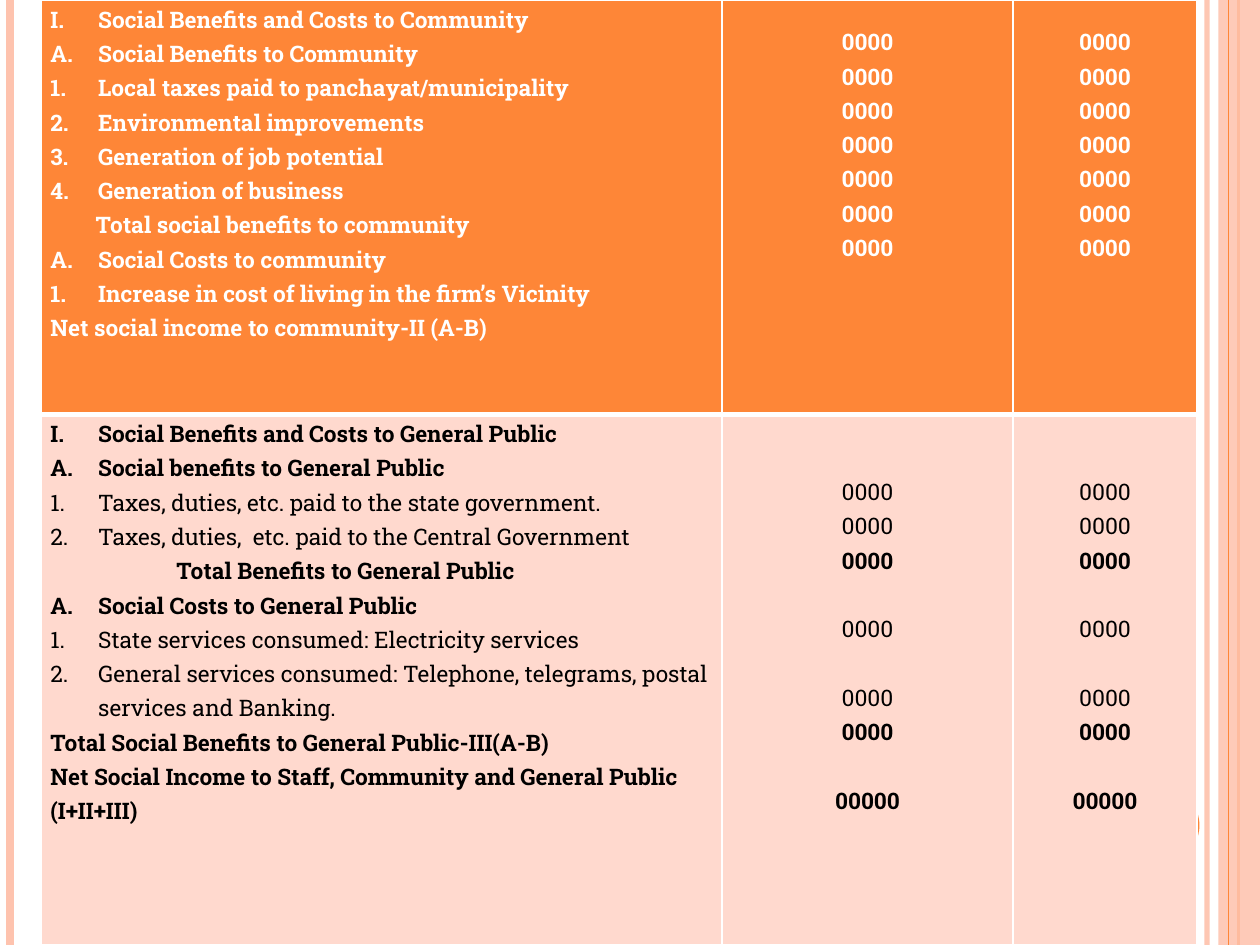
from lxml import etree
from pptx import Presentation
from pptx.dml.color import RGBColor
from pptx.enum.shapes import MSO_CONNECTOR, MSO_SHAPE
from pptx.enum.text import MSO_ANCHOR, PP_ALIGN
from pptx.oxml import parse_xml
from pptx.oxml.ns import nsdecls, qn
from pptx.util import Inches, Pt

LINE = MSO_CONNECTOR.STRAIGHT
RECT, OVAL = MSO_SHAPE.RECTANGLE, MSO_SHAPE.OVAL
LEFT, MID, TOP = PP_ALIGN.LEFT, PP_ALIGN.CENTER, MSO_ANCHOR.TOP
ORANGE, PEACH, PALE = "FE8637", "FEC3AE", "FFD9CE"
WHITE, BLACK = "FFFFFF", "000000"
ROMAN, ALPHA, NUM = "romanUcPeriod", "alphaUcPeriod", "arabicPeriod"
HANG, GAP = 0.38, 19.6

COSTS = [
    [
        ("Social Benefits and Costs to Community", dict(mark=ROMAN)),
        ("Social Benefits to Community", dict(mark=ALPHA)),
        ("Local taxes paid to panchayat/municipality", dict(mark=NUM)),
        ("Environmental improvements", dict(mark=NUM)),
        ("Generation of job potential", dict(mark=NUM)),
        ("Generation of business", dict(mark=NUM)),
        ("Total social benefits to community", dict(left=0.36)),
        ("Social Costs to community", dict(mark=ALPHA)),
        ("Increase in cost of living in the firm’s Vicinity", dict(mark=NUM)),
        ("Net social income to community-II (A-B)", {}),
    ],
    [
        ("Social Benefits and Costs to General Public", dict(mark=ROMAN)),
        ("Social benefits to General Public", dict(mark=ALPHA)),
        ("Taxes, duties, etc. paid to the state government.", dict(mark=NUM, bold=False)),
        ("Taxes, duties,  etc. paid to the Central Government", dict(mark=NUM, bold=False)),
        ("Total Benefits to General Public", dict(left=1)),
        ("Social Costs to General Public", dict(mark=ALPHA)),
        ("State services consumed: Electricity services", dict(mark=NUM, bold=False)),
        ("General services consumed: Telephone, telegrams, postal services and Banking.",
         dict(mark=NUM, bold=False)),
        ("Total Social Benefits to General Public-III(A-B)", {}),
        ("Net Social Income to Staff, Community and General Public (I+II+III)", {}),
    ],
]
SUMS = [
    [("0000", {})] * 7,
    [
        ("0000", dict(bold=False)),
        ("0000", dict(bold=False)),
        ("0000", {}),
        ("0000", dict(bold=False, gap=GAP)),
        ("0000", dict(bold=False, gap=GAP)),
        ("0000", {}),
        ("00000", dict(gap=GAP)),
    ],
]


def tint(code):
    """Turn a hex string into a colour."""
    return RGBColor.from_string(code)


def fade(part, share):
    """Set the opacity of the solid fill inside a part."""
    hue = next(part.iter(qn("a:srgbClr")))
    etree.SubElement(hue, qn("a:alpha")).set("val", str(share * 1000))


def write(para, text, color=BLACK, bold=True, mark=None, left=0, gap=0, align=LEFT):
    """Fill a paragraph with formatted text."""
    para.alignment, para.line_spacing = align, 1.15
    para.space_before = Pt(gap)
    props = para._p.get_or_add_pPr()
    props.set("marL", str(Inches(HANG if mark else left)))
    props.set("indent", str(Inches(-HANG if mark else 0)))
    if mark:
        etree.SubElement(props, qn("a:buAutoNum")).set("type", mark)
    run = para.add_run()
    run.text = text
    font = run.font
    font.name, font.size, font.bold = "Roboto Slab", Pt(13), bold
    font.color.rgb = tint(color)


class Deck:
    """Holds the style and the current slide."""

    def __init__(self):
        """Start a deck with one blank slide."""
        self.file = Presentation()
        self.file.slide_width, self.file.slide_height = Inches(10), Inches(7.5)
        self.slide = self.file.slides.add_slide(self.file.slide_layouts[6])
        self.shapes = self.slide.shapes

    def rule(self, x, color, width, share=100):
        """Draw a rule over the full height."""
        line = self.shapes.add_connector(LINE, Inches(x), 0, Inches(x), Inches(7.5))
        line.line.color.rgb, line.line.width = tint(color), Pt(width)
        props = line._element.spPr
        etree.SubElement(props, qn("a:effectLst"))
        if share < 100:
            fade(props, share)

    def shape(self, kind, box, color, share=100):
        """Draw a plain filled shape."""
        item = self.shapes.add_shape(kind, *map(Inches, box))
        item.shadow.inherit = False
        item.fill.solid()
        item.fill.fore_color.rgb = tint(color)
        item.line.fill.background()
        if share < 100:
            fade(item._element.spPr, share)

    def edges(self, cell, top, base):
        """Draw white borders round a cell."""
        props = cell._tc.get_or_add_tcPr()
        for spot, (side, width) in enumerate(zip("LRTB", (1, 1, top, base))):
            props.insert(spot, parse_xml(
                f'<a:ln{side} {nsdecls("a")} w="{Pt(width)}"><a:solidFill>'
                f'<a:srgbClr val="{WHITE}"/></a:solidFill></a:ln{side}>'))

    def cell(self, cell, lines, fill, color, align, top):
        """Fill a cell with lines of text."""
        cell.fill.solid()
        cell.fill.fore_color.rgb = tint(fill)
        cell.margin_left = cell.margin_right = Inches(0.07)
        cell.margin_top, cell.margin_bottom = Inches(top), 0
        cell.vertical_anchor = TOP
        frame = cell.text_frame
        for spot, (text, form) in enumerate(lines):
            para = frame.add_paragraph() if spot else frame.paragraphs[0]
            write(para, text, color=color, align=align, **form)

    def table(self, box, cols, rows):
        """Add the table of costs and sums."""
        grid = self.shapes.add_table(len(rows), len(cols), *map(Inches, box)).table
        for col, width in zip(grid.columns, cols):
            col.width = Inches(width)
        looks = [(ORANGE, WHITE, 0.18, 1, 3), (PALE, BLACK, 0.46, 3, 1)]
        for r, (fill, color, drop, top, base) in enumerate(looks):
            grid.rows[r].height = Inches(rows[r])
            for c in range(len(cols)):
                cell = grid.cell(r, c)
                if c:
                    self.cell(cell, SUMS[r], fill, color, MID, drop)
                else:
                    self.cell(cell, COSTS[r], fill, color, LEFT, 0)
                self.edges(cell, top, base)


def main():
    """Build the slide and save it."""
    deck = Deck()
    deck.rule(9.58, PEACH, 3, 93)
    deck.rule(0.08, PEACH, 4.5)
    deck.rule(9.83, ORANGE, 1.5)
    deck.shape(RECT, (9.67, 0, 0.33, 7.5), PEACH, 87)
    deck.rule(9.75, ORANGE, 0.75)
    deck.shape(OVAL, (8.92, 6.25, 0.6, 0.6), ORANGE)
    deck.table((0.33, 0, 9.17, 7.5), (5.4, 2.31, 1.46), (3.29, 4.21))
    deck.file.save("out.pptx")


if __name__ == "__main__":
    main()
